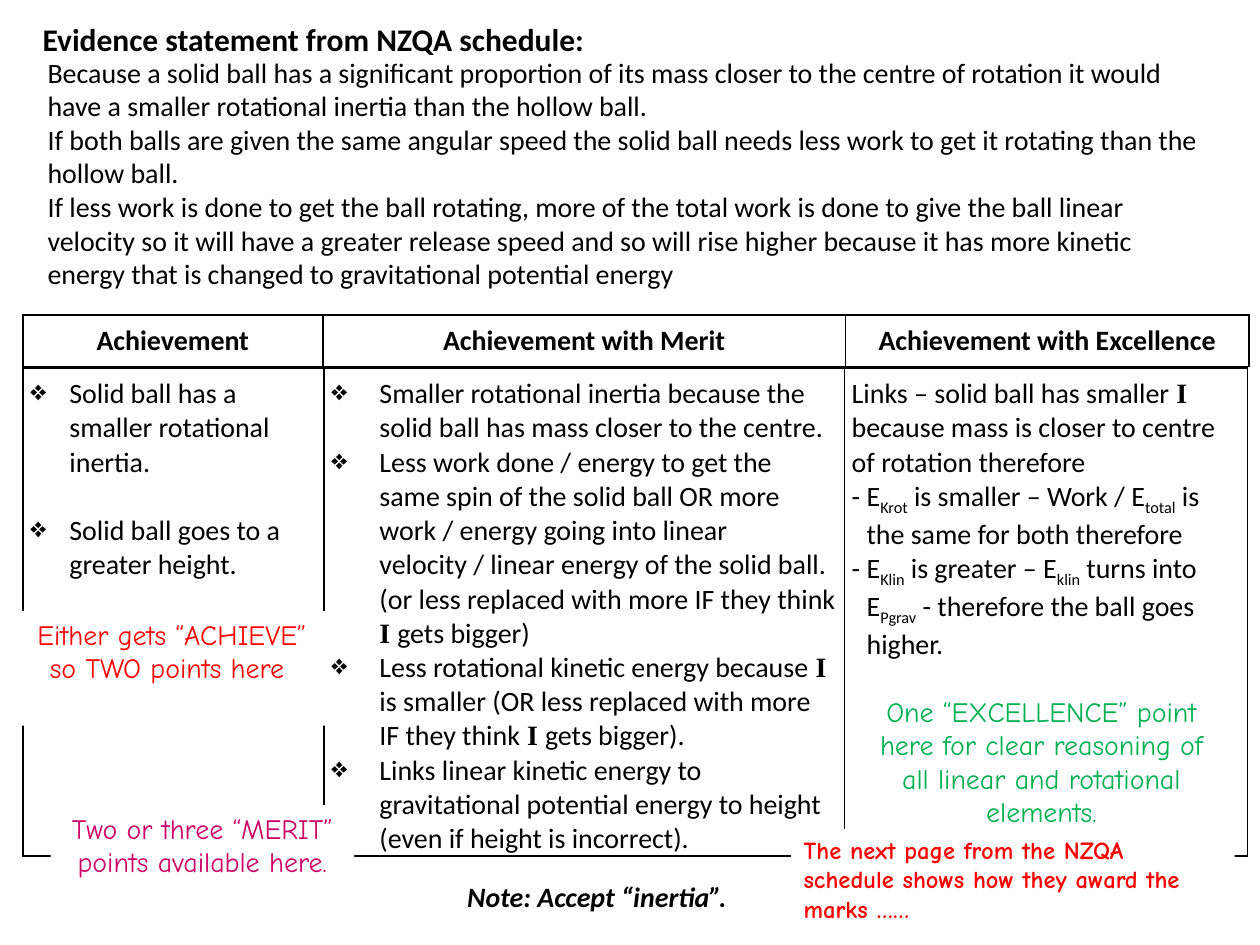
from lxml.etree import SubElement
from pptx import Presentation
from pptx.dml.color import RGBColor
from pptx.enum.shapes import MSO_SHAPE
from pptx.enum.text import MSO_ANCHOR, PP_ALIGN
from pptx.oxml.ns import qn
from pptx.util import Cm, Pt

BLACK = RGBColor(0x00, 0x00, 0x00)
WHITE = RGBColor(0xFF, 0xFF, 0xFF)
RED = RGBColor(0xFF, 0x00, 0x00)
MAGENTA = RGBColor(0xCC, 0x00, 0x66)
GREEN = RGBColor(0x00, 0xB0, 0x50)
BODY_FONT, NOTE_FONT, SYMBOL_FONT = "Calibri", "Comic Neue", "Times New Roman"

INERTIA = (" I ", "symbol")

STATEMENT = [
    "Because a solid ball has a significant proportion of its mass closer to the "
    "centre of rotation it would have a smaller rotational inertia than the hollow ball.",
    "If both balls are given the same angular speed the solid ball needs less work "
    "to get it rotating than the hollow ball.",
    "If less work is done to get the ball rotating, more of the total work is done to "
    "give the ball linear velocity so it will have a greater release speed and so will "
    "rise higher because it has more kinetic energy that is changed to gravitational "
    "potential energy",
]
GRADES = ["Achievement", "Achievement with Merit", "Achievement with Excellence"]
ACHIEVEMENT = [
    ["Solid ball has a smaller rotational inertia."],
    ["Solid ball goes to a greater height."],
]
MERIT = [
    ["Smaller rotational inertia because the solid ball has mass closer to the centre."],
    ["Less work done / energy to get the same spin of the solid ball OR more work / "
     "energy going into linear velocity / linear energy of the solid ball. "
     "(or less replaced with more IF they think", INERTIA, "gets bigger)"],
    ["Less rotational kinetic energy because", INERTIA,
     "is smaller (OR less replaced with more IF they think", INERTIA, "gets bigger)."],
    ["Links linear kinetic energy to gravitational potential energy to height "
     "(even if height is incorrect)."],
]
EXCELLENCE = [
    ["Links – solid ball has smaller", INERTIA,
     "because mass is closer to centre of rotation therefore"],
    ["- E", ("Krot", "sub"), " is smaller – Work / E", ("total", "sub"),
     " is the same for both therefore"],
    ["- E", ("Klin", "sub"), " is greater – E", ("klin", "sub"), " turns into E",
     ("Pgrav", "sub"), " - therefore the ball goes higher."],
]


def add_span(para, text, size=16, font=BODY_FONT, color=BLACK, bold=False, italic=False):
    span = para.add_run()
    span.text = text
    span.font.size, span.font.name = Pt(size), font
    span.font.bold, span.font.italic = bold, italic
    span.font.color.rgb = color
    return span


def next_para(frame, index):
    return frame.paragraphs[0] if index == 0 else frame.add_paragraph()


def add_text(page, place, lines, wrap=True, **style):
    box = page.shapes.add_textbox(*(Cm(value) for value in place))
    box.text_frame.word_wrap = wrap
    for index, line in enumerate(lines):
        add_span(next_para(box.text_frame, index), line, **style)


def add_comment(page, place, text, color, align=PP_ALIGN.CENTER, **style):
    """White panel that covers part of the table and carries a remark."""
    panel = page.shapes.add_shape(MSO_SHAPE.RECTANGLE, *(Cm(value) for value in place))
    panel.shadow.inherit = False
    panel.fill.solid()
    panel.fill.fore_color.rgb = WHITE
    panel.line.fill.background()
    frame = panel.text_frame
    frame.word_wrap = True
    frame.vertical_anchor = MSO_ANCHOR.TOP
    para = frame.paragraphs[0]
    para.alignment = align
    add_span(para, text, font=NOTE_FONT, color=color, **style)


def set_borders(cell):
    properties = cell._tc.get_or_add_tcPr()
    for position, side in enumerate(("lnL", "lnR", "lnT", "lnB")):
        line = properties.makeelement(qn(f"a:{side}"), {"w": str(Pt(1))})
        fill = SubElement(line, qn("a:solidFill"))
        SubElement(fill, qn("a:srgbClr"), val=str(BLACK))
        properties.insert(position, line)


def add_grid(page, left, top, widths, height):
    """One-row table with plain cells; returns its cells."""
    frame = page.shapes.add_table(1, len(widths), Cm(left), Cm(top),
                                  Cm(sum(widths)), Cm(height))
    table = frame.table
    table.first_row = table.horz_banding = False
    for column, width in zip(table.columns, widths):
        column.width = Cm(width)
    cells = list(table.rows[0].cells)
    for cell in cells:
        cell.margin_left = cell.margin_right = Cm(0.15)
        cell.margin_top = cell.margin_bottom = Cm(0.18)
        cell.fill.background()
        set_borders(cell)
    return cells


def set_hanging(para, indent, bullet=None):
    properties = para._p.get_or_add_pPr()
    properties.set("marL", str(Cm(indent)))
    properties.set("indent", str(-Cm(indent)))
    if bullet:
        SubElement(properties, qn("a:buChar"), char=bullet)


def fill_criteria(cell, criteria, indent, bullet=None, gap=0):
    for index, parts in enumerate(criteria):
        para = next_para(cell.text_frame, index)
        if index and gap:
            para.space_before = Pt(gap)
        if bullet or index:
            set_hanging(para, indent, bullet)
        for part in parts:
            text, kind = (part, None) if isinstance(part, str) else part
            if kind == "symbol":
                add_span(para, text, font=SYMBOL_FONT, bold=True)
            else:
                span = add_span(para, text)
                if kind == "sub":
                    span._r.get_or_add_rPr().set("baseline", "-25000")


def main():
    deck = Presentation()
    deck.slide_width, deck.slide_height = Cm(25.4), Cm(19.05)
    page = deck.slides.add_slide(deck.slide_layouts[6])

    # Evidence statement
    add_text(page, (0.71, 0.99, 23.7, 5.05), STATEMENT)

    # Criteria for each grade
    achieved, merit, excellence = add_grid(page, 0.46, 7.42, (6.07, 10.49, 8.13), 9.83)
    fill_criteria(achieved, ACHIEVEMENT, 0.79, "❖", gap=19.5)
    fill_criteria(merit, MERIT, 0.97, "❖")
    fill_criteria(excellence, EXCELLENCE, 0.3)

    # Grade headings
    for cell, grade in zip(add_grid(page, 0.46, 6.35, (6.05, 10.54, 8.13), 1.02), GRADES):
        para = cell.text_frame.paragraphs[0]
        para.alignment = PP_ALIGN.CENTER
        para.space_before = para.space_after = Pt(3)
        add_span(para, grade, bold=True)

    # Note and title
    add_text(page, (9.17, 17.6, 5.82, 0.94), ["Note: Accept “inertia”."],
             wrap=False, bold=True, italic=True)
    add_text(page, (0.61, 0.28, 11.53, 1.02), ["Evidence statement from NZQA schedule:"],
             wrap=False, size=18, bold=True)

    # Remarks on the marking
    add_comment(page, (0.38, 12.32, 6.17, 2.31),
                "Either gets “ACHIEVE” so TWO points here ", RED)
    add_comment(page, (1.02, 16.23, 6.12, 2.31),
                "Two or three “MERIT” points available here.", MAGENTA)
    add_comment(page, (17.17, 13.87, 7.65, 3),
                "One “EXCELLENCE” point here for clear reasoning of all linear and "
                "rotational elements.", GREEN)
    add_comment(page, (15.95, 16.71, 8.94, 2.06),
                "The next page from the NZQA schedule shows how they award the marks ……",
                RED, align=PP_ALIGN.LEFT, size=14, bold=True)

    deck.save("out.pptx")


if __name__ == "__main__":
    main()
